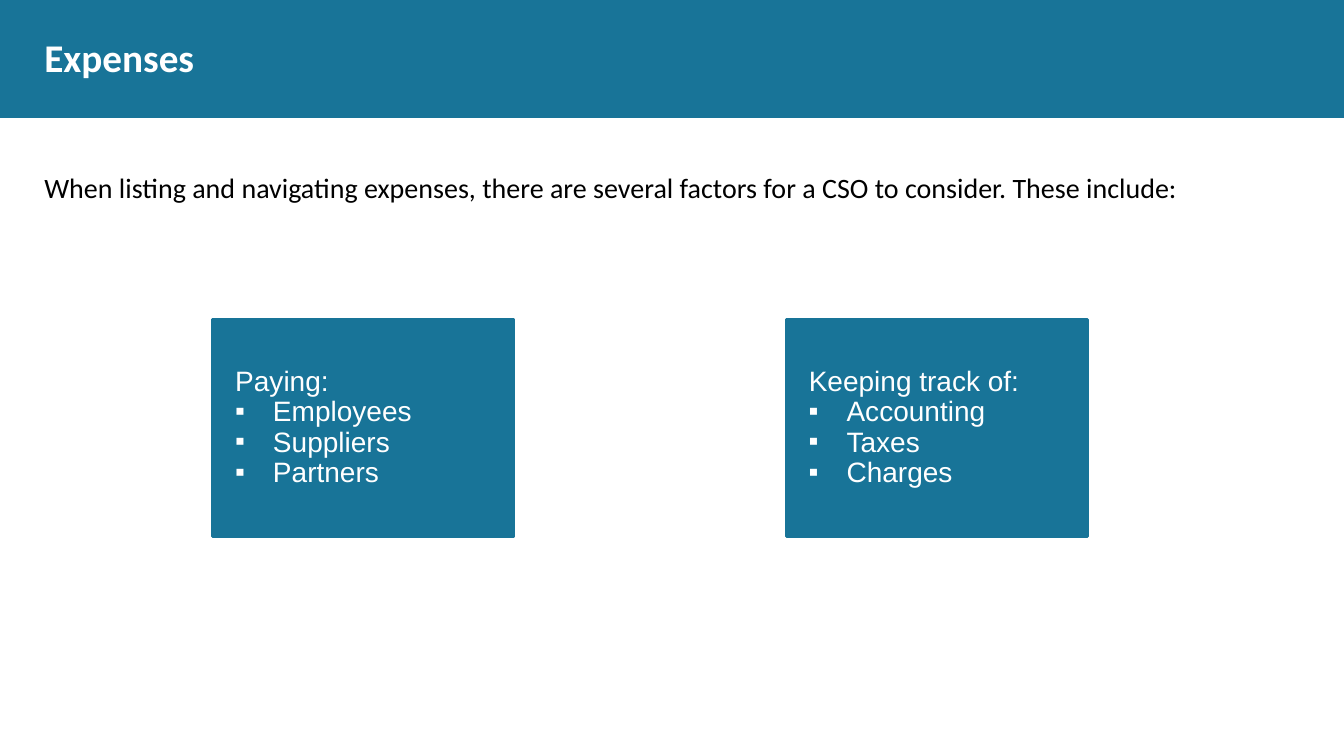
from dataclasses import dataclass

from lxml import etree
from pptx import Presentation
from pptx.dml.color import RGBColor
from pptx.enum import shapes as sh, text as tx
from pptx.oxml import ns
from pptx.util import Pt


@dataclass(frozen=True)
class Theme:
    teal: str = "187498"
    white: str = "FFFFFF"
    black: str = "000000"
    head: str = "Calibri"
    body: str = "Arial"
    large: float = 28
    text: float = 20


@dataclass(frozen=True)
class Box:
    left: float
    top: float
    width: float
    height: float


@dataclass(frozen=True)
class Card:
    title: str
    items: tuple[str, ...]


THEME = Theme()
WIDTH, HEIGHT = 960, 540
BANNER = Box(0, 0, WIDTH, 84.24)
TITLE = Box(31.68, 13.68, 897.12, 53.28)
INTRO = Box(31.68, 124.56, 897.12, 383.76)
FIRST = Box(151.92, 228.24, 215.28, 154.8)
STEP = 409.68
CARDS = (
    Card("Paying:", ("Employees", "Suppliers", "Partners")),
    Card("Keeping track of:", ("Accounting", "Taxes", "Charges")),
)


def place(box: Box) -> tuple:
    return tuple(Pt(n) for n in (box.left, box.top, box.width, box.height))


def style(para, face: str, size: float, color: str, bold: bool = False) -> None:
    font = para.font
    font.name, font.size, font.bold = face, Pt(size), bold
    font.color.rgb = RGBColor.from_string(color)


def indent(para, left: float, first: float = 0) -> None:
    props = para._p.get_or_add_pPr()
    props.set("marL", str(Pt(left)))
    props.set("indent", str(Pt(first)))


def bullet(para, mark: str, color: str) -> None:
    props = para._p.get_or_add_pPr()
    tint = etree.SubElement(props, ns.qn("a:buClr"))
    etree.SubElement(tint, ns.qn("a:srgbClr"), val=color)
    etree.SubElement(props, ns.qn("a:buFont"), typeface=THEME.body)
    etree.SubElement(props, ns.qn("a:buChar"), char=mark)


def justify(para) -> None:
    para.alignment = tx.PP_ALIGN.JUSTIFY
    para.line_spacing = 0.9


def add_rect(slide, box: Box, line: float = 0):
    rect = slide.shapes.add_shape(sh.MSO_SHAPE.RECTANGLE, *place(box))
    rect.shadow.inherit = False
    teal = RGBColor.from_string(THEME.teal)
    rect.fill.solid()
    rect.fill.fore_color.rgb = teal
    if line:
        rect.line.color.rgb = teal
        rect.line.width = Pt(line)
    else:
        rect.line.fill.background()
    return rect


def add_label(slide, box: Box, words: str, anchor: tx.MSO_ANCHOR):
    """Add a text box without margins and return its paragraph."""
    frame = slide.shapes.add_textbox(*place(box)).text_frame
    frame.word_wrap = True
    frame.vertical_anchor = anchor
    frame.margin_left = frame.margin_right = Pt(0)
    frame.margin_top = frame.margin_bottom = Pt(0)
    para = frame.paragraphs[0]
    para.text = words
    return para


def add_card(slide, card: Card, box: Box) -> None:
    frame = add_rect(slide, box, 2).text_frame
    frame.word_wrap = True
    frame.vertical_anchor = tx.MSO_ANCHOR.MIDDLE
    frame.text = "\n".join((card.title, *card.items))
    for row, para in enumerate(frame.paragraphs):
        justify(para)
        if row:
            indent(para, 36, -27)
            bullet(para, "▪", THEME.white)
        else:
            indent(para, 9)
        style(para, THEME.body, THEME.text, THEME.white)


def main() -> None:
    deck = Presentation()
    deck.slide_width, deck.slide_height = Pt(WIDTH), Pt(HEIGHT)
    slide = deck.slides.add_slide(deck.slide_layouts[6])

    add_rect(slide, BANNER)
    intro = add_label(
        slide,
        INTRO,
        "When listing and navigating expenses, there are several factors "
        "for a CSO to consider. These include:",
        tx.MSO_ANCHOR.TOP,
    )
    justify(intro)
    style(intro, THEME.head, THEME.text, THEME.black)
    title = add_label(slide, TITLE, "Expenses", tx.MSO_ANCHOR.MIDDLE)
    style(title, THEME.head, THEME.large, THEME.white, bold=True)

    for col, card in enumerate(CARDS):
        left = FIRST.left + col * STEP
        add_card(slide, card, Box(left, FIRST.top, FIRST.width, FIRST.height))
    deck.save("out.pptx")


if __name__ == "__main__":
    main()
